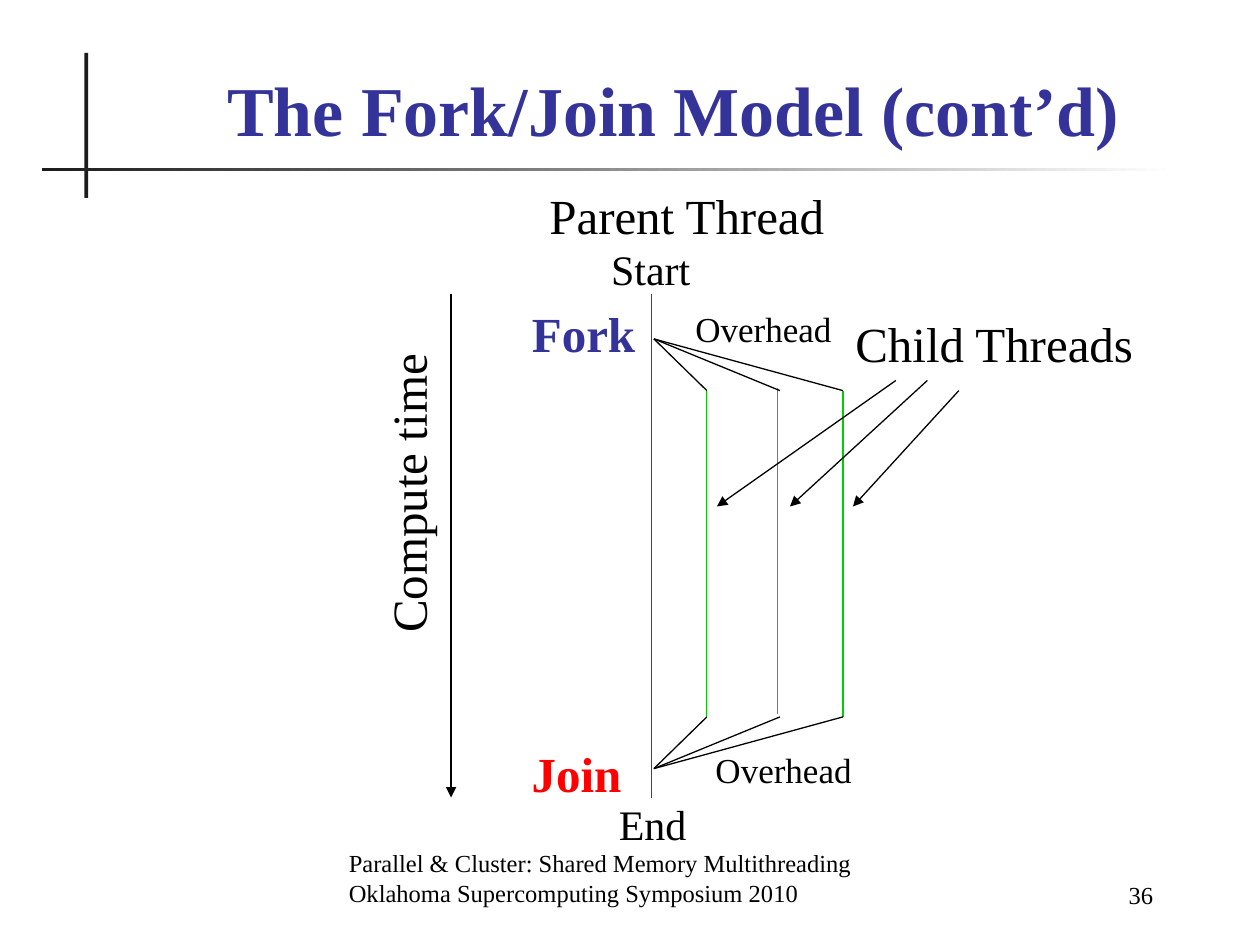
from lxml.etree import SubElement
from pptx import Presentation
from pptx.dml.color import RGBColor
from pptx.enum.shapes import MSO_CONNECTOR as Connector, MSO_SHAPE as Shape
from pptx.enum.text import MSO_ANCHOR as Anchor, MSO_AUTO_SIZE as AutoSize, PP_ALIGN as Align
from pptx.oxml.ns import qn
from pptx.util import Inches, Pt

BLACK = RGBColor(0x00, 0x00, 0x00)
WHITE = RGBColor(0xFF, 0xFF, 0xFF)
CHARCOAL = RGBColor(0x1C, 0x1C, 0x1C)
NAVY = RGBColor(0x33, 0x33, 0x99)
BLUE = RGBColor(0x33, 0x33, 0xCC)
GREEN = RGBColor(0x00, 0xCC, 0x00)
RED = RGBColor(0xFF, 0x00, 0x00)


class ThreadDiagram:
    font_name = "Times New Roman"
    line_width = Pt(0.75)

    def __init__(self, page):
        self.page = page

    def bar(self, left, top, width, height, end_color=None):
        bar = self.page.shapes.add_shape(
            Shape.RECTANGLE, *map(Inches, (left, top, width, height)))
        bar.shadow.inherit = False
        bar.line.fill.background()
        if end_color is None:
            bar.fill.solid()
            bar.fill.fore_color.rgb = CHARCOAL
        else:
            bar.fill.gradient()
            bar.fill.gradient_angle = 0
            for stop, color in zip(bar.fill.gradient_stops, (CHARCOAL, end_color)):
                stop.color.rgb = color

    def line(self, start, end, color=BLACK, arrow=False):
        line = self.page.shapes.add_connector(
            Connector.STRAIGHT, *map(Inches, (*start, *end)))
        line.line.width = self.line_width
        line.line.color.rgb = color
        if arrow:
            SubElement(line.line._get_or_add_ln(), qn("a:tailEnd"), type="triangle")
        SubElement(line._element.spPr, qn("a:effectLst"))

    def text(self, wording, left, top, width, height, size, color=BLACK,
             bold=False, align=Align.LEFT, rotation=0, block=False):
        box = self.page.shapes.add_textbox(*map(Inches, (left, top, width, height)))
        box.rotation = rotation
        frame = box.text_frame
        frame_format = {
            "word_wrap": block,
            "auto_size": AutoSize.NONE if block else AutoSize.SHAPE_TO_FIT_TEXT,
            "vertical_anchor": Anchor.BOTTOM if block else Anchor.TOP,
            "text": wording,
        }
        for name, value in frame_format.items():
            setattr(frame, name, value)
        font_format = {"name": self.font_name, "size": Pt(size), "bold": bold}
        for para in frame.paragraphs:
            para.alignment = align
            for span in para.runs:
                for name, value in font_format.items():
                    setattr(span.font, name, value)
                span.font.color.rgb = color


def main():
    deck = Presentation()
    deck.slide_width, deck.slide_height = Inches(10), Inches(7.5)
    page = deck.slides.add_slide(deck.slide_layouts[6])
    diagram = ThreadDiagram(page)

    diagram.bar(0.67, 0.42, 0.03, 1.15)
    diagram.bar(0.33, 1.33, 9, 0.03, end_color=WHITE)
    diagram.text("Parallel & Cluster: Shared Memory Multithreading\n"
                 "Oklahoma Supercomputing Symposium 2010",
                 2.67, 6.75, 4.37, 0.5, 14, block=True)
    diagram.text("36", 7.83, 6.77, 1.42, 0.5, 14, align=Align.RIGHT, block=True)
    diagram.text("The Fork/Join Model (cont’d)", 1.08, 0.5, 8.52, 0.74, 40,
                 NAVY, bold=True, align=Align.CENTER, block=True)

    start_y, end_y = 2.33, 6.33
    diagram.line((5.17, start_y), (5.17, end_y), BLUE)
    diagram.line((3.58, start_y), (3.58, end_y), arrow=True)

    child_top, child_bottom = 3.1, 5.69
    for child_x, shift_x, shift_y in ((5.61, 0, 0), (6.19, -0.02, -0.02), (6.69, 0, 0)):
        diagram.line((child_x + shift_x, child_top + shift_y),
                     (child_x + shift_x, child_bottom + shift_y), GREEN)
        diagram.line((5.19, 2.69), (child_x, child_top))
        diagram.line((5.19, 6.1), (child_x, child_bottom))

    for tail, tip_x in (((7.11, 3.02), 5.69), ((7.36, 3.02), 6.27), ((7.61, 3.1), 6.77)):
        diagram.line(tail, (tip_x, 4.02), arrow=True)

    diagram.text("Parent Thread", 4.25, 1.42, 2.39, 0.57, 28, align=Align.RIGHT)
    diagram.text("Fork", 4.12, 2.36, 1.02, 0.57, 28, NAVY, bold=True, align=Align.RIGHT)
    diagram.text("Join", 4.12, 5.85, 0.91, 0.57, 28, RED, bold=True, align=Align.RIGHT)
    diagram.text("Start", 4.75, 1.88, 0.83, 0.5, 24, align=Align.CENTER)
    diagram.text("End", 4.81, 6.29, 0.74, 0.5, 24, align=Align.CENTER)
    diagram.text("Child Threads", 6.69, 2.44, 2.41, 0.57, 28)
    diagram.text("Compute time", 2.03, 3.63, 2.41, 0.57, 28, rotation=270)
    for left, top in ((5.42, 2.39), (5.58, 5.89)):
        diagram.text("Overhead", left, top, 1.28, 0.43, 20)

    deck.save("out.pptx")


if __name__ == "__main__":
    main()
